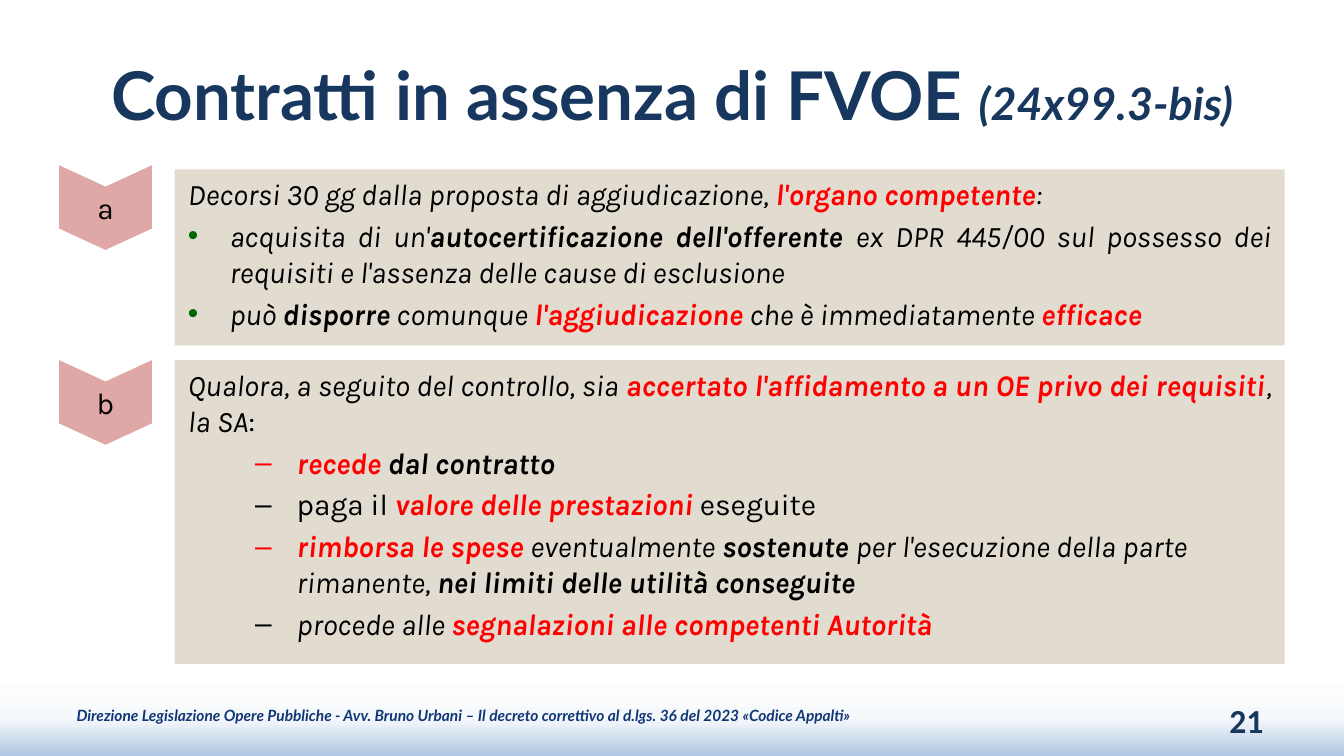
from lxml import etree
from pptx import Presentation
from pptx import util as u
from pptx.dml.color import RGBColor
from pptx.enum import shapes, text
from pptx.oxml import ns

COLOURS = {
    "navy": "17375E",
    "footer": "103676",
    "chevron": "C0504D",
    "panel": "E1DBD0",
    "black": "000000",
    "red": "FF0000",
    "green": "006600",
}
BACKGROUND = [(89, "FFFFFF"), (95, "F6F9FC"), (100, "B0C6E1")]
STYLES = {
    "normal": {},
    "italic": {"italic": True},
    "strong": {"italic": True, "bold": True},
    "key": {"italic": True, "bold": True, "colour": "red"},
}
DOT = {"bullet": "•", "bullet_colour": "green", "margin": 0.31}
DASH = {"bullet": "–", "margin": 0.81, "level": 1, "align": text.PP_ALIGN.LEFT}

STEPS = [
    ("a", 1.2, 1.26, 1.31, [
        ({}, [("Decorsi 30 gg dalla proposta di aggiudicazione, ", "italic"),
              ("l'organo competente", "key"), (":", "italic")]),
        (DOT, [("acquisita di un'", "italic"),
               ("autocertificazione dell'offerente ", "strong"),
               ("ex DPR 445/00 sul possesso dei requisiti e l'assenza "
                "delle cause di esclusione", "italic")]),
        (DOT, [("può ", "italic"), ("disporre", "strong"),
               (" comunque ", "italic"), ("l'aggiudicazione", "key"),
               (" che è immediatamente ", "italic"), ("efficace", "key")]),
    ]),
    ("b", 2.65, 2.68, 2.26, [
        ({}, [("Qualora, a seguito del controllo, sia ", "italic"),
              ("accertato l'affidamento a un OE privo dei requisiti", "key"),
              (", la SA", "italic"), (": ", "normal")]),
        (DASH, [("recede", "key"), (" dal contratto", "strong")]),
        (DASH, [("paga il ", "normal"), ("valore delle prestazioni ", "key"),
                ("eseguite", "normal")]),
        (DASH, [("rimborsa le spese ", "key"), ("eventualmente", "italic"),
                (" sostenute ", "strong"),
                ("per l'esecuzione della parte rimanente, ", "italic"),
                ("nei limiti delle utilità conseguite", "strong")]),
        (DASH, [("procede alle ", "italic"),
                ("segnalazioni alle competenti Autorità", "key")]),
    ]),
]


def add_span(para, words, size=16, font="Karla", colour="black", bold=False, italic=False):
    """Add formatted text to a paragraph."""
    span = para.add_run()
    span.text = words
    span.font.size = u.Pt(size)
    span.font.name = font
    span.font.bold = bold
    span.font.italic = italic
    span.font.color.rgb = RGBColor.from_string(COLOURS[colour])


def add_bullet(para, bullet, margin, colour=None):
    """Give a paragraph a hanging bullet."""
    props = para._p.get_or_add_pPr()
    props.set("marL", str(u.Inches(margin)))
    props.set("indent", str(-u.Inches(0.31)))
    if colour:
        holder = etree.SubElement(props, ns.qn("a:buClr"))
        etree.SubElement(holder, ns.qn("a:srgbClr"), val=COLOURS[colour])
    etree.SubElement(props, ns.qn("a:buFont"), typeface="Arial")
    etree.SubElement(props, ns.qn("a:buChar"), char=bullet)


def set_background(page):
    """Fill the page with a vertical gradient that ends in blue."""
    fill = page.background.fill
    fill.gradient()
    gradient = page._element.find(".//" + ns.qn("a:gradFill"))
    stops = gradient.find(ns.qn("a:gsLst"))
    for stop in list(stops):
        stops.remove(stop)
    for place, colour in BACKGROUND:
        stop = etree.SubElement(stops, ns.qn("a:gs"), pos=str(place * 1000))
        etree.SubElement(stop, ns.qn("a:srgbClr"), val=colour)
    gradient.find(ns.qn("a:lin")).set("ang", "5400000")


def set_title(page):
    """Place and write the title."""
    title = page.shapes.title
    title.left, title.top = u.Inches(0.5), u.Inches(0.23)
    title.width, title.height = u.Inches(9), u.Inches(0.94)
    frame = title.text_frame
    frame.auto_size = text.MSO_AUTO_SIZE.NONE
    frame.vertical_anchor = text.MSO_ANCHOR.MIDDLE
    para = frame.paragraphs[0]
    para.alignment = text.PP_ALIGN.CENTER
    look = {"font": "Lato", "colour": "navy", "bold": True}
    add_span(para, "Contratti in assenza di FVOE ", size=36, **look)
    add_span(para, "(24x99.3-bis)", size=24, italic=True, **look)


def add_label(page, words, left, top, width, align, inset=0.1, **look):
    """Add a one-line text box at the foot of the page."""
    box = page.shapes.add_textbox(
        u.Inches(left), u.Inches(top), u.Inches(width), u.Inches(0.3))
    frame = box.text_frame
    frame.word_wrap = True
    frame.vertical_anchor = text.MSO_ANCHOR.MIDDLE
    frame.margin_left = frame.margin_right = u.Inches(inset)
    frame.margin_top = frame.margin_bottom = u.Inches(0.04)
    frame.paragraphs[0].alignment = align
    add_span(frame.paragraphs[0], words, **look)


def add_block(page, kind, left, top, width, height, colour):
    """Add a filled shape without line or shadow."""
    block = page.shapes.add_shape(
        kind, u.Inches(left), u.Inches(top), u.Inches(width), u.Inches(height))
    block.shadow.inherit = False
    block.fill.solid()
    block.fill.fore_color.rgb = RGBColor.from_string(COLOURS[colour])
    block.line.fill.background()
    return block


def add_chevron(page, letter, top):
    """Add a half-transparent chevron that points down, with an upright letter."""
    chevron = add_block(page, shapes.MSO_SHAPE.CHEVRON, 0.47, top, 0.63, 0.69, "chevron")
    chevron.rotation = 90
    chevron.adjustments[0] = 0.253
    colour = chevron._element.spPr.find(ns.qn("a:solidFill"))[0]
    etree.SubElement(colour, ns.qn("a:alpha"), val="50000")
    frame = chevron.text_frame
    frame._txBody.bodyPr.set("vert", "vert270")
    frame.vertical_anchor = text.MSO_ANCHOR.MIDDLE
    frame.paragraphs[0].alignment = text.PP_ALIGN.CENTER
    add_span(frame.paragraphs[0], letter)


def add_panel(page, top, height, paras):
    """Add a panel with its paragraphs."""
    panel = add_block(page, shapes.MSO_SHAPE.RECTANGLE, 1.3, top, 8.26, height, "panel")
    frame = panel.text_frame
    frame.word_wrap = True
    frame.vertical_anchor = text.MSO_ANCHOR.TOP
    for index, (layout, spans) in enumerate(paras):
        para = frame.add_paragraph() if index else frame.paragraphs[0]
        para.alignment = layout.get("align", text.PP_ALIGN.JUSTIFY)
        para.level = layout.get("level", 0)
        if index:
            para.space_before = u.Pt(3.2)
        if "bullet" in layout:
            add_bullet(para, layout["bullet"], layout["margin"], layout.get("bullet_colour"))
        for words, style in spans:
            add_span(para, words, **STYLES[style])


def main():
    """Build the slide and save it."""
    deck = Presentation()
    deck.slide_width, deck.slide_height = u.Inches(10), u.Inches(10 * 9 / 16)
    page = deck.slides.add_slide(deck.slide_layouts[5])
    set_background(page)
    set_title(page)
    add_label(page, "21", 7.17, 5.21, 2.33, text.PP_ALIGN.RIGHT,
              size=18, font="Calibri", colour="navy", bold=True)
    add_label(page, "Direzione Legislazione Opere Pubbliche - Avv. Bruno Urbani – "
              "Il decreto correttivo al d.lgs. 36 del 2023 «Codice Appalti»",
              0.5, 5.17, 5.92, text.PP_ALIGN.LEFT, inset=0.07,
              size=8.3, font="Lato", colour="footer", bold=True, italic=True)
    for letter, chevron_top, panel_top, height, paras in STEPS:
        add_panel(page, panel_top, height, paras)
        add_chevron(page, letter, chevron_top)
    deck.save("out.pptx")


if __name__ == "__main__":
    main()
